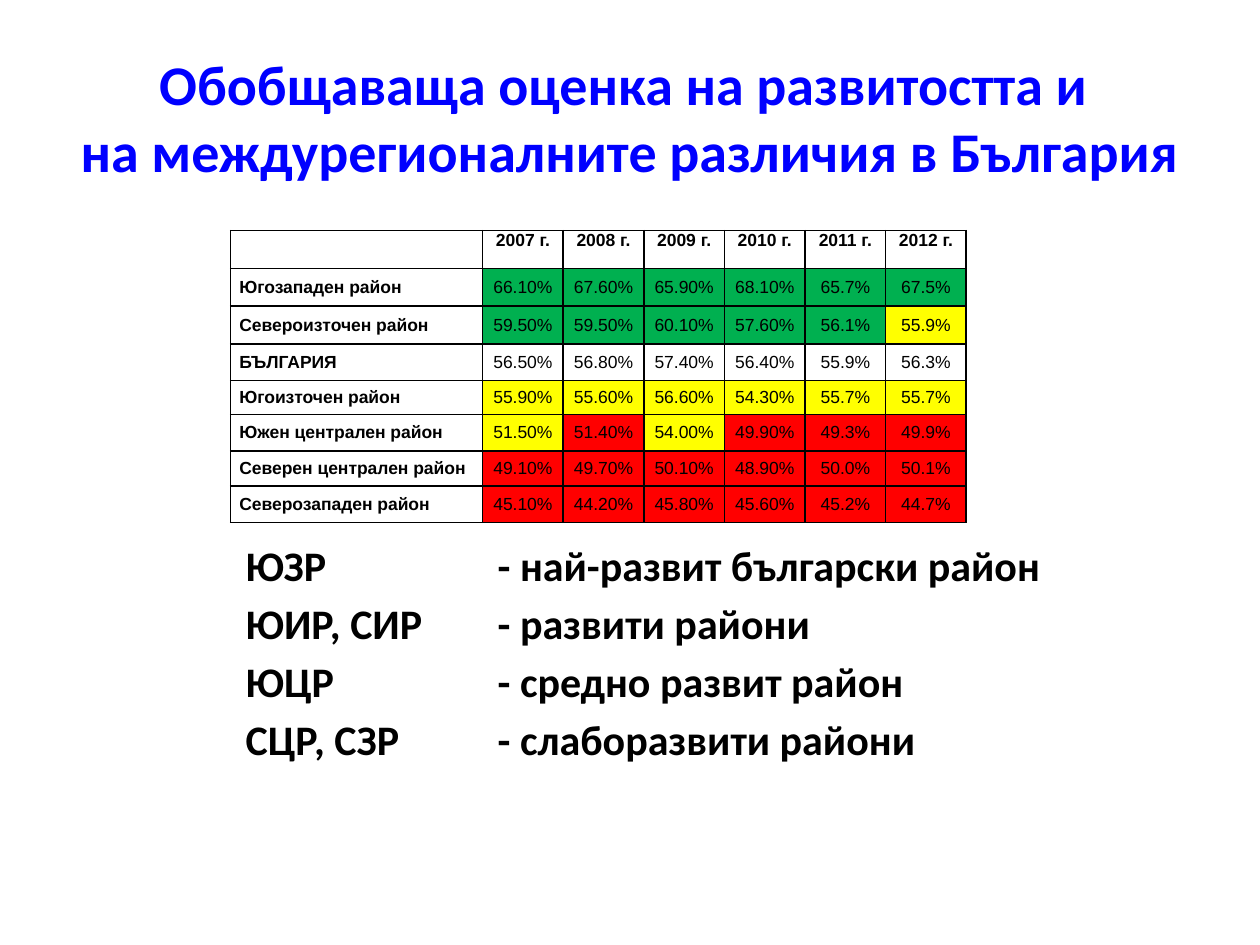
from lxml import etree
from pptx import Presentation
from pptx.dml.color import RGBColor
from pptx.enum.text import MSO_ANCHOR, PP_ALIGN
from pptx.oxml.ns import qn
from pptx.util import Inches, Pt

TOP, MIDDLE = MSO_ANCHOR.TOP, MSO_ANCHOR.MIDDLE
LEFT, CENTER = PP_ALIGN.LEFT, PP_ALIGN.CENTER

TITLE = "Обобщаваща оценка на развитостта и \vна междурегионалните различия в България"
YEARS = [f"{year} г." for year in range(2007, 2013)]
NATION = "БЪЛГАРИЯ"
RATES = {
    "Югозападен район": "66.10% 67.60% 65.90% 68.10% 65.7% 67.5%",
    "Североизточен район": "59.50% 59.50% 60.10% 57.60% 56.1% 55.9%",
    NATION: "56.50% 56.80% 57.40% 56.40% 55.9% 56.3%",
    "Югоизточен район": "55.90% 55.60% 56.60% 54.30% 55.7% 55.7%",
    "Южен централен район": "51.50% 51.40% 54.00% 49.90% 49.3% 49.9%",
    "Северен централен район": "49.10% 49.70% 50.10% 48.90% 50.0% 50.1%",
    "Северозападен район": "45.10% 44.20% 45.80% 45.60% 45.2% 44.7%",
}
GROUPS = [
    ("ЮЗР", "- най-развит български район"),
    ("ЮИР, СИР", "- развити райони"),
    ("ЮЦР", "- средно развит район"),
    ("СЦР, СЗР", "- слаборазвити райони"),
]
COLS = [2] + [0.64] * 6
ROWS = [0.3, 0.3, 0.3, 0.29, 0.27, 0.29, 0.28, 0.29]
WHITE, BLACK, BLUE = "FFFFFF", "000000", "0000FF"
GREEN, YELLOW, RED = "00B050", "FFFF00", "FF0000"
WEAK = 51.5  # rates below this are red


def paint(font, color, **style):
    font.color.rgb = RGBColor.from_string(color)
    for key, value in style.items():
        setattr(font, key, value)


def place(shape, *box):
    for key, value in zip(("left", "top", "width", "height"), box):
        setattr(shape, key, Inches(value))


def shade(name, rate, mean):
    """Rate a region against the national mean of the same year."""
    if name == NATION:
        return WHITE
    value = float(rate.rstrip("%"))
    if value > float(mean.rstrip("%")):
        return GREEN
    return YELLOW if value >= WEAK else RED


def frame(cell):
    """Draw a black line on all four sides of a cell."""
    props = cell._tc.get_or_add_tcPr()
    for spot, side in enumerate(("lnL", "lnR", "lnT", "lnB")):
        line = etree.Element(qn(f"a:{side}"), w=str(Pt(1)))
        fill = etree.SubElement(line, qn("a:solidFill"))
        etree.SubElement(fill, qn("a:srgbClr"), val=BLACK)
        props.insert(spot, line)


def fill_cell(cell, text, color, bold, align, anchor):
    look = {"margin_left": Inches(0.07), "margin_right": Inches(0.07),
            "margin_top": 0, "margin_bottom": 0, "vertical_anchor": anchor}
    for key, value in look.items():
        setattr(cell, key, value)
    cell.fill.solid()
    cell.fill.fore_color.rgb = RGBColor.from_string(color)
    para = cell.text_frame.paragraphs[0]
    para.alignment = align
    run = para.add_run()
    run.text = text
    paint(run.font, BLACK, name="Arial", size=Pt(10), bold=bold)
    frame(cell)


def add_rates(slide):
    table = slide.shapes.add_table(
        len(ROWS), len(COLS), Inches(1.83), Inches(1.83),
        Inches(sum(COLS)), Inches(sum(ROWS))).table
    for col, width in zip(table.columns, COLS):
        col.width = Inches(width)
    for row, height in zip(table.rows, ROWS):
        row.height = Inches(height)
    for c, text in enumerate([""] + YEARS):
        fill_cell(table.cell(0, c), text, WHITE, True, CENTER, TOP)
    means = RATES[NATION].split()
    for r, (name, line) in enumerate(RATES.items(), 1):
        fill_cell(table.cell(r, 0), name, WHITE, True, LEFT, MIDDLE)
        for c, (rate, mean) in enumerate(zip(line.split(), means), 1):
            fill_cell(table.cell(r, c), rate, shade(name, rate, mean),
                      False, CENTER, MIDDLE)


def add_groups(slide):
    box = slide.shapes.add_textbox(
        Inches(1.95), Inches(4.28), Inches(7.5), Inches(1.9))
    text = box.text_frame
    text.word_wrap = True
    for side in ("left", "right", "top", "bottom"):
        setattr(text, f"margin_{side}", 0)
    for n, group in enumerate(GROUPS):
        para = text.add_paragraph() if n else text.paragraphs[0]
        tabs = etree.SubElement(para._p.get_or_add_pPr(), qn("a:tabLst"))
        etree.SubElement(tabs, qn("a:tab"), pos=str(Inches(2)), algn="l")
        if n:
            para.space_before = Pt(4.4)
        run = para.add_run()
        run.text = "\t".join(group)
        paint(run.font, BLACK, name="Calibri", size=Pt(24), bold=True)


def main():
    deck = Presentation()
    deck.slide_width, deck.slide_height = Inches(10), Inches(7.5)
    slide = deck.slides.add_slide(deck.slide_layouts[5])
    title = slide.shapes.title
    place(title, 0.5, 0.3, 9, 1.25)
    title.text_frame.text = TITLE
    title.text_frame.vertical_anchor = MIDDLE
    para = title.text_frame.paragraphs[0]
    para.alignment = CENTER
    for run in para.runs:
        paint(run.font, BLUE, name="Calibri", size=Pt(32), bold=True)
    add_rates(slide)
    add_groups(slide)
    deck.save("out.pptx")


if __name__ == "__main__":
    main()
